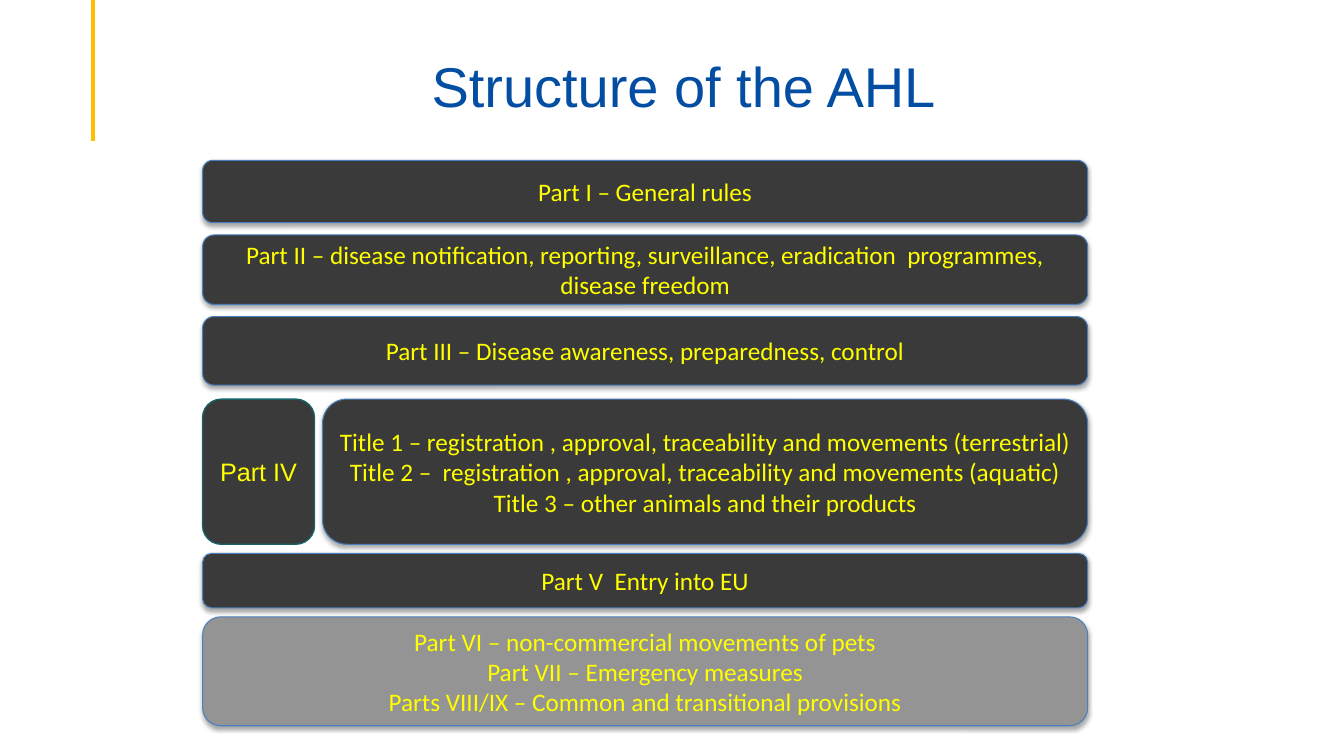
from dataclasses import dataclass

from lxml.etree import SubElement
from pptx import Presentation
from pptx.dml.color import RGBColor
from pptx.enum.shapes import MSO_CONNECTOR, MSO_SHAPE
from pptx.enum.text import MSO_ANCHOR, PP_ALIGN
from pptx.oxml.ns import qn
from pptx.util import Pt


@dataclass(frozen=True)
class Theme:
    accent: str = "FFC000"
    title: str = "034EA2"
    text: str = "FFFF00"
    dark: str = "3A3A3A"
    grey: str = "949494"
    border: str = "4B7EBC"
    label_border: str = "166267"
    title_font: str = "Arial"
    body_font: str = "Calibri"
    title_size: float = 40
    body_size: float = 18


THEME = Theme()

# Shared edges of the stack of parts
LEFT, RIGHT = 144.7, 776.9
PART_IV_TOP, PART_IV_HEIGHT = 285.1, 103.7
LABEL_WIDTH, TITLES_LEFT = 80, 230.4

# Full-width parts: top, height, fill, lines
PARTS = [
    (114.5, 44.6, THEME.dark, ["Part I – General rules"]),
    (167.8, 49.7, THEME.dark,
     ["Part II – disease notification, reporting, surveillance, "
      "eradication  programmes, disease freedom"]),
    (226.1, 49, THEME.dark, ["Part III – Disease awareness, preparedness, control"]),
    (395.3, 38.9, THEME.dark, ["Part V  Entry into EU"]),
    (440.6, 77.8, THEME.grey,
     ["Part VI – non-commercial movements of pets",
      "Part VII – Emergency measures",
      "Parts VIII/IX – Common and transitional provisions"]),
]
PART_IV_TITLES = [
    "Title 1 – registration , approval, traceability and movements (terrestrial)",
    "Title 2 –  registration , approval, traceability and movements (aquatic)",
    "Title 3 – other animals and their products",
]


def rgb(color):
    return RGBColor.from_string(color)


def write(tf, lines, font, size, color):
    tf.word_wrap = True
    tf.text = "\n".join(lines)
    for p in tf.paragraphs:
        p.alignment = PP_ALIGN.CENTER
        for r in p.runs:
            r.font.name = font
            r.font.size = Pt(size)
            r.font.color.rgb = rgb(color)


def add_soft_shadow(sp):
    effects = sp._element.spPr.find(qn("a:effectLst"))
    shadow = SubElement(effects, qn("a:outerShdw"), blurRad=str(Pt(3.1)),
                        dist=str(Pt(1.8)), dir="5400000", rotWithShape="0")
    color = SubElement(shadow, qn("a:srgbClr"), val="000000")
    SubElement(color, qn("a:alpha"), val="35000")


def add_box(slide, left, top, width, height, lines, fill=THEME.dark,
            border=THEME.border, border_width=0.75, font=THEME.body_font,
            shadow=True):
    sp = slide.shapes.add_shape(MSO_SHAPE.ROUNDED_RECTANGLE,
                                Pt(left), Pt(top), Pt(width), Pt(height))
    sp.fill.solid()
    sp.fill.fore_color.rgb = rgb(fill)
    sp.line.color.rgb = rgb(border)
    sp.line.width = Pt(border_width)
    sp.shadow.inherit = False
    if shadow:
        add_soft_shadow(sp)
    tf = sp.text_frame
    tf.vertical_anchor = MSO_ANCHOR.MIDDLE
    write(tf, lines, font, THEME.body_size, THEME.text)


def add_title(slide, text):
    tf = slide.shapes.add_textbox(Pt(74.2), Pt(23.8), Pt(828), Pt(61.9)).text_frame
    tf.vertical_anchor = MSO_ANCHOR.BOTTOM
    tf.margin_bottom = 0
    write(tf, [text], THEME.title_font, THEME.title_size, THEME.title)
    tf.paragraphs[0].line_spacing = 0.9


def add_accent_line(slide, x, length):
    line = slide.shapes.add_connector(MSO_CONNECTOR.STRAIGHT,
                                      Pt(x), Pt(0), Pt(x), Pt(length))
    line.line.color.rgb = rgb(THEME.accent)
    line.line.width = Pt(2.25)
    SubElement(line._element.spPr, qn("a:effectLst"))


def main():
    prs = Presentation()
    prs.slide_width, prs.slide_height = Pt(960), Pt(540)
    slide = prs.slides.add_slide(prs.slide_layouts[6])

    # Heading
    add_accent_line(slide, 66.4, 100.8)
    add_title(slide, "Structure of the AHL")

    # Full-width parts
    for top, height, fill, lines in PARTS:
        add_box(slide, LEFT, top, RIGHT - LEFT, height, lines, fill)

    # Part IV: label and its titles side by side
    add_box(slide, TITLES_LEFT, PART_IV_TOP, RIGHT - TITLES_LEFT, PART_IV_HEIGHT,
            PART_IV_TITLES)
    add_box(slide, LEFT, PART_IV_TOP, LABEL_WIDTH, PART_IV_HEIGHT, ["Part IV"],
            border=THEME.label_border, border_width=1, font=THEME.title_font,
            shadow=False)

    prs.save("out.pptx")


if __name__ == "__main__":
    main()
